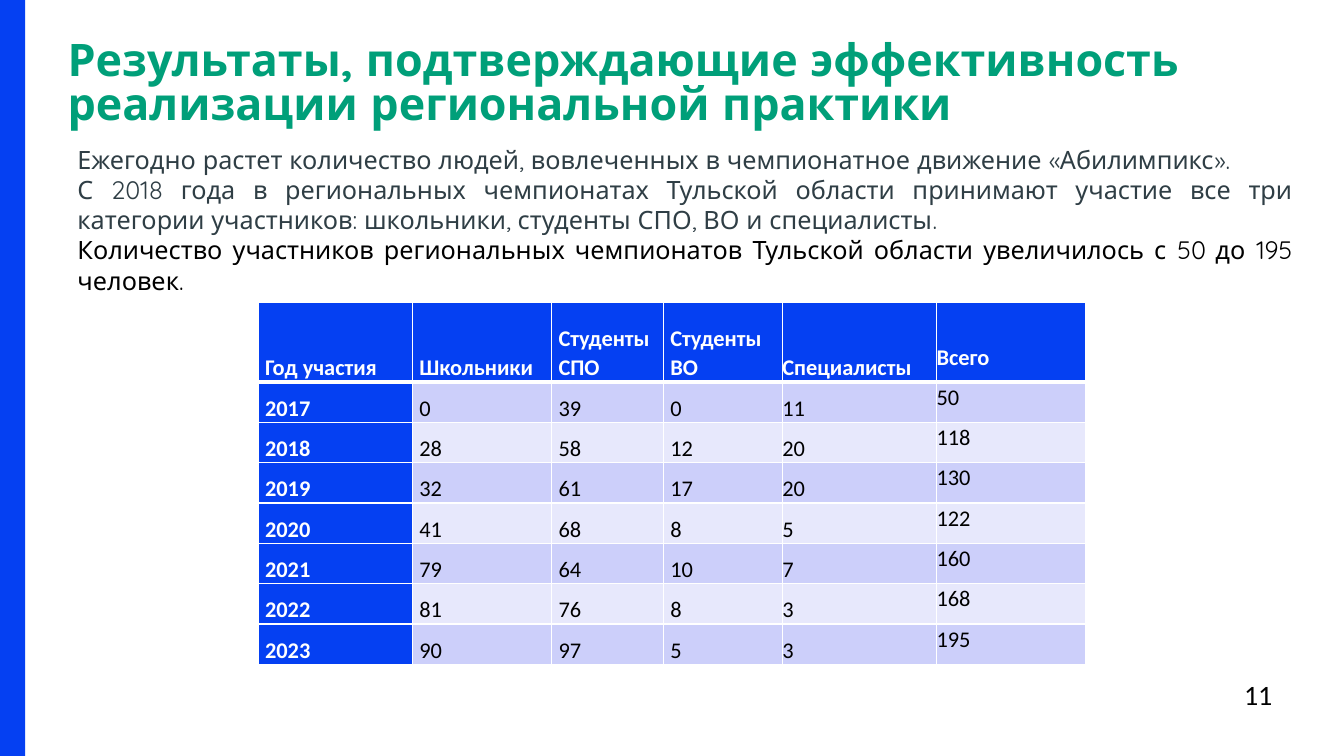
import pptx
import pptx.util
import pptx.dml.color
import pptx.enum.shapes
import pptx.enum.text
import pptx.oxml
import pptx.oxml.ns

Inches = pptx.util.Inches
Pt = pptx.util.Pt
RGBColor = pptx.dml.color.RGBColor
ALIGN = pptx.enum.text.PP_ALIGN
ANCHOR = pptx.enum.text.MSO_ANCHOR

BLUE = RGBColor(0x05, 0x40, 0xF2)
GREEN = RGBColor(0x00, 0x9F, 0x79)
SLATE = RGBColor(0x2F, 0x3E, 0x45)
BLACK = RGBColor(0, 0, 0)
WHITE = RGBColor(0xFF, 0xFF, 0xFF)
BANDS = (RGBColor(0xCC, 0xCF, 0xFA), RGBColor(0xE7, 0xE8, 0xFC))

TITLE = "Результаты, подтверждающие эффективность реализации региональной практики"
INTRO = [
    ("Ежегодно растет количество людей, вовлеченных в чемпионатное движение «Абилимпикс».",
     SLATE, ALIGN.LEFT),
    ("С 2018 года в региональных чемпионатах Тульской области принимают участие все три "
     "категории участников: школьники, студенты СПО, ВО и специалисты.", SLATE, ALIGN.JUSTIFY),
    ("Количество участников региональных чемпионатов Тульской области увеличилось "
     "с 50 до 195 человек.", BLACK, ALIGN.JUSTIFY),
]
PARTICIPANTS = [
    ("Год участия", "Школьники", "Студенты СПО", "Студенты ВО", "Специалисты", "Всего"),
    (2017, 0, 39, 0, 11, 50),
    (2018, 28, 58, 12, 20, 118),
    (2019, 32, 61, 17, 20, 130),
    (2020, 41, 68, 8, 5, 122),
    (2021, 79, 64, 10, 7, 160),
    (2022, 81, 76, 8, 3, 168),
    (2023, 90, 97, 5, 3, 195),
]
COLUMN_WIDTHS = (1.53, 1.38, 1.11, 1.18, 1.53, 1.48)
HEADER_HEIGHT, ROW_HEIGHT = 0.79, 0.4
SPECIALISTS, TOTAL = 4, 5


def write(para, text, *, font, size, color, bold=False, align=ALIGN.LEFT,
          line_spacing=None, space_after=None):
    para.alignment = align
    para.line_spacing = line_spacing
    para.space_after = space_after
    span = para.add_run()
    span.text = text
    span.font.name = font
    span.font.size = Pt(size)
    span.font.bold = bold
    span.font.color.rgb = color


def set_borders(cell, top, bottom):
    """Draw white cell borders; top and bottom are widths in points."""
    properties = cell._tc.get_or_add_tcPr()
    for side, width in (("L", 1), ("R", 1), ("T", top), ("B", bottom)):
        properties.append(pptx.oxml.parse_xml(
            f'<a:ln{side} {pptx.oxml.ns.nsdecls("a")} w="{Pt(width)}">'
            f'<a:solidFill><a:srgbClr val="{WHITE}"/></a:solidFill></a:ln{side}>'))


class ResultsSlide:
    heading_font = "Quicksand"
    table_font = "Calibri"

    def __init__(self, deck):
        self.page = deck.slides.add_slide(deck.slide_layouts[6])

    def bar(self, left, top, width, height, color):
        box = self.page.shapes.add_shape(
            pptx.enum.shapes.MSO_SHAPE.RECTANGLE,
            Inches(left), Inches(top), Inches(width), Inches(height))
        box.shadow.inherit = False
        box.fill.solid()
        box.fill.fore_color.rgb = color
        box.line.fill.background()

    def text_frame(self, left, top, width, height, wrap=True):
        box = self.page.shapes.add_textbox(
            Inches(left), Inches(top), Inches(width), Inches(height))
        box.text_frame.word_wrap = wrap
        return box.text_frame

    def title(self, text):
        frame = self.text_frame(0.67, 0.4, 11.93, 0.49)
        frame.margin_left = frame.margin_right = frame.margin_top = frame.margin_bottom = 0
        write(frame.paragraphs[0], text, font=self.heading_font, size=32,
              color=GREEN, bold=True, line_spacing=Pt(32))

    def intro(self, entries):
        frame = self.text_frame(0.67, 1.38, 12.25, 1.92)
        for index, (text, color, align) in enumerate(entries):
            para = frame.add_paragraph() if index else frame.paragraphs[0]
            write(para, text, font=self.heading_font, size=18, color=color, align=align)

    def page_number(self, number):
        frame = self.text_frame(12.24, 6.67, 0.53, 0.44, wrap=False)
        write(frame.paragraphs[0], str(number), font=self.table_font, size=20, color=BLACK)

    def table(self, left, top, rows):
        height = HEADER_HEIGHT + ROW_HEIGHT * (len(rows) - 1)
        table = self.page.shapes.add_table(
            len(rows), len(COLUMN_WIDTHS), Inches(left), Inches(top),
            Inches(sum(COLUMN_WIDTHS)), Inches(height)).table
        table.first_col = True
        table.horz_banding = False
        for column, width in zip(table.columns, COLUMN_WIDTHS):
            column.width = Inches(width)
        for row_index, values in enumerate(rows):
            table.rows[row_index].height = Inches(ROW_HEIGHT if row_index else HEADER_HEIGHT)
            for column_index, value in enumerate(values):
                self.cell(table.cell(row_index, column_index), value, row_index, column_index)

    def cell(self, cell, value, row, column):
        heading = row == 0 or column == 0
        padded = column < SPECIALISTS
        cell.margin_left = cell.margin_right = Inches(0.07 if padded else 0)
        cell.margin_top = Inches(0.01 if padded else 0)
        cell.margin_bottom = 0
        cell.vertical_anchor = ANCHOR.TOP if column == TOTAL else ANCHOR.BOTTOM
        if row == 0 and column == TOTAL:
            cell.margin_top = Inches(0.4)
        set_borders(cell, top=3 if row == 1 else 1, bottom=3 if row == 0 else 1)
        cell.fill.solid()
        cell.fill.fore_color.rgb = BLUE if heading else BANDS[(row - 1) % 2]
        write(cell.text_frame.paragraphs[0], str(value), font=self.table_font, size=16,
              color=WHITE if heading else BLACK, bold=heading,
              line_spacing=1.07, space_after=Pt(8))


def main():
    deck = pptx.Presentation()
    deck.slide_width, deck.slide_height = Inches(13.33), Inches(7.5)
    slide = ResultsSlide(deck)
    slide.page_number(11)
    slide.title(TITLE)
    slide.intro(INTRO)
    slide.bar(0, 0, 0.25, 7.5, BLUE)
    slide.table(2.56, 3, PARTICIPANTS)
    deck.save("out.pptx")


if __name__ == "__main__":
    main()
